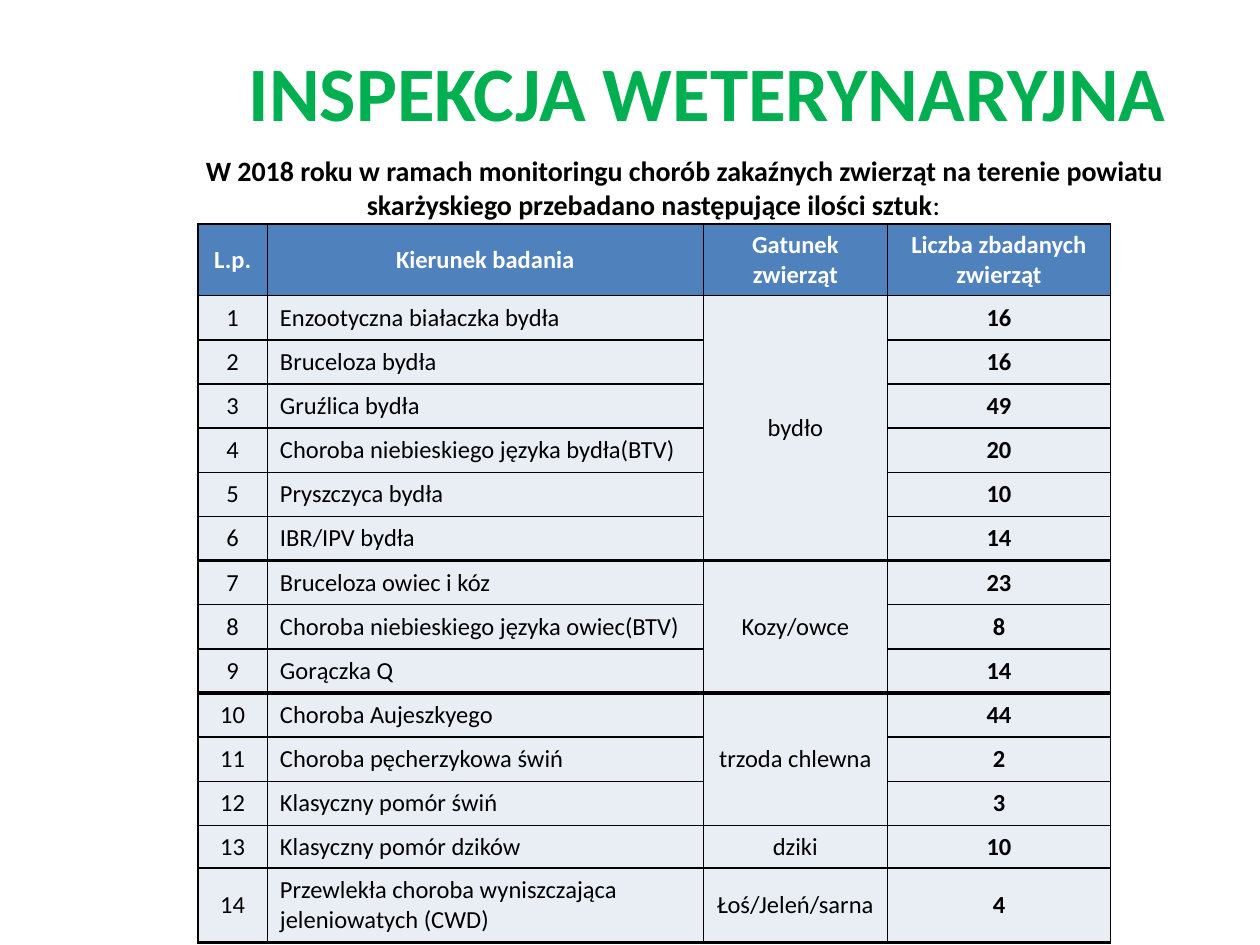
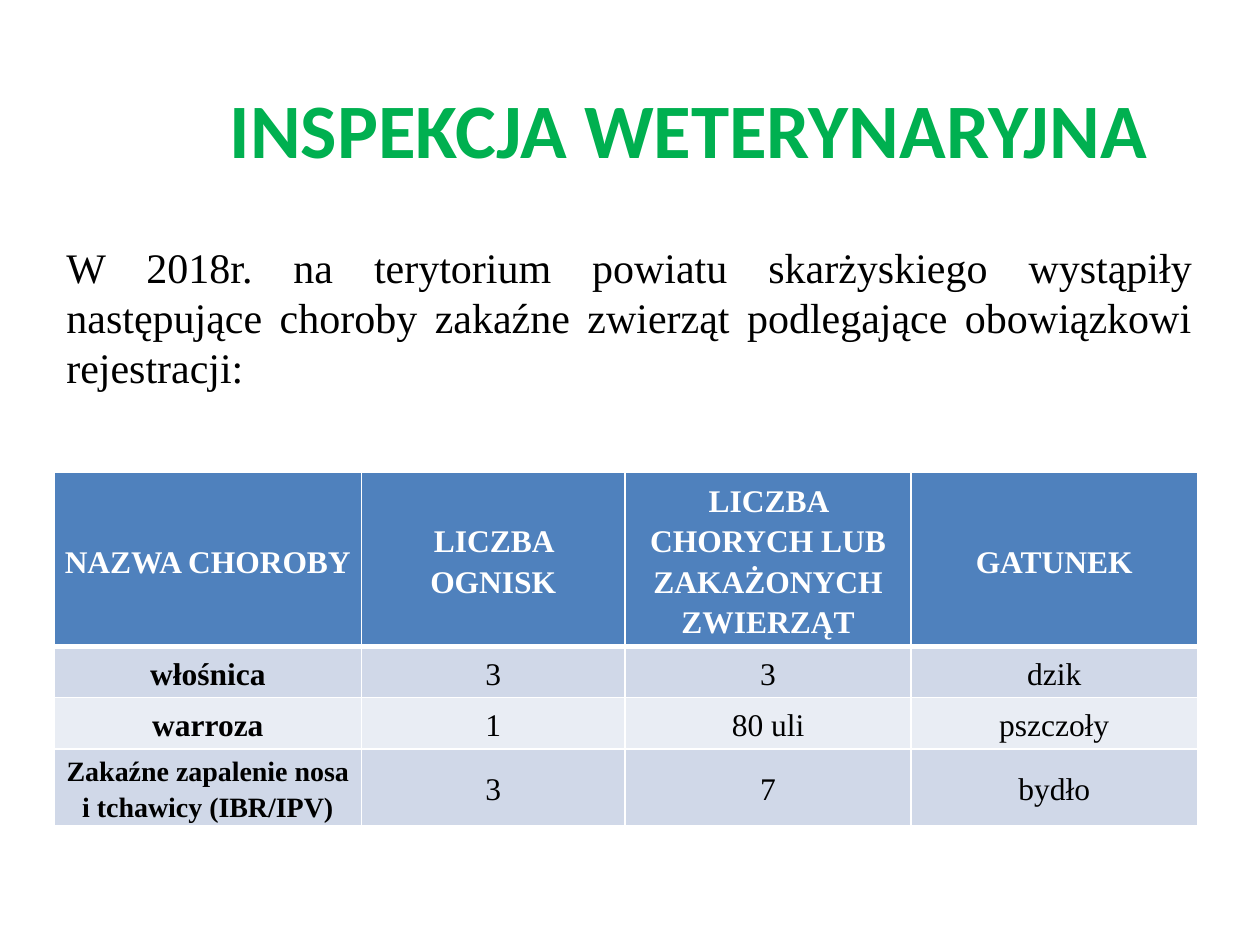
"""Build two slides on the 2018 veterinary inspection results."""
from lxml.etree import SubElement
from pptx import Presentation
from pptx.dml.color import RGBColor
from pptx.enum.text import MSO_ANCHOR as Anchor, PP_ALIGN as Align
from pptx.oxml.ns import qn
from pptx.util import Cm, Pt

COLOURS = {
    "title": "00B050",
    "text": "000000",
    "header": "4F81BD",
    "light": "E9EDF4",
    "dark": "D0D8E8",
    "white": "FFFFFF",
}


def write(paragraph, text, size=14, font="Calibri", colour="text", bold=False, align=Align.CENTER):
    paragraph.alignment = align
    run = paragraph.add_run()
    run.text = text
    run.font.size = Pt(size)
    run.font.name = font
    run.font.bold = bold
    run.font.color.rgb = RGBColor.from_string(COLOURS[colour])


def dress(cell, fill, line, top=1, bottom=1):
    cell.vertical_anchor = Anchor.MIDDLE
    properties = cell._tc.get_or_add_tcPr()
    for side, width in (("L", 1), ("R", 1), ("T", top), ("B", bottom)):
        border = SubElement(properties, qn(f"a:ln{side}"), w=str(Pt(width)))
        paint = SubElement(border, qn("a:solidFill"))
        SubElement(paint, qn("a:srgbClr"), val=COLOURS[line])
    cell.fill.solid()
    cell.fill.fore_color.rgb = RGBColor.from_string(COLOURS[fill])


deck = Presentation()
deck.slide_width, deck.slide_height = Cm(25.4), Cm(19.05)
blank = deck.slide_layouts[6]
monitoring = deck.slides.add_slide(blank)
outbreaks = deck.slides.add_slide(blank)

for slide, left, top in ((monitoring, 4.67, 0.78), (outbreaks, 4.29, 1.52)):
    title = slide.shapes.add_textbox(Cm(left), Cm(top), Cm(19.2), Cm(2.13)).text_frame
    title.word_wrap = True
    write(title.paragraphs[0], "INSPEKCJA WETERYNARYJNA", size=44, colour="title", bold=True)

intro = monitoring.shapes.add_textbox(Cm(1.27), Cm(2.97), Cm(22.86), Cm(1.6)).text_frame
intro.word_wrap = True
lead = intro.paragraphs[0]
indents = lead._p.get_or_add_pPr()
indents.set("marL", str(Cm(0.95)))
indents.set("indent", str(Cm(1.25)))
write(lead, "W 2018 roku w ramach monitoringu chorób zakaźnych zwierząt na terenie powiatu "
      "skarżyskiego przebadano następujące ilości sztuk", size=16, bold=True)
write(lead, ":", size=16)

tests = [
    ("Enzootyczna białaczka bydła", 16),
    ("Bruceloza bydła", 16),
    ("Gruźlica bydła", 49),
    ("Choroba niebieskiego języka bydła(BTV)", 20),
    ("Pryszczyca bydła", 10),
    ("IBR/IPV bydła", 14),
    ("Bruceloza owiec i kóz", 23),
    ("Choroba niebieskiego języka owiec(BTV)", 8),
    ("Gorączka Q", 14),
    ("Choroba Aujeszkyego", 44),
    ("Choroba pęcherzykowa świń", 2),
    ("Klasyczny pomór świń", 3),
    ("Klasyczny pomór dzików", 10),
    ("Przewlekła choroba wyniszczająca jeleniowatych (CWD)", 4),
]
species = [("bydło", 1, 6), ("Kozy/owce", 7, 9), ("trzoda chlewna", 10, 12),
           ("dziki", 13, 13), ("Łoś/Jeleń/sarna", 14, 14)]
thick_after = {6: 2.25, 9: 2.25, 14: 2.25}

tested = monitoring.shapes.add_table(15, 4, Cm(3.99), Cm(4.52), Cm(18.4), Cm(14.44)).table
for column, width in zip(tested.columns, (1.4, 8.79, 3.71, 4.5)):
    column.width = Cm(width)
for row, height in zip(tested.rows, [1.4] + [0.89] * 12 + [0.86, 1.5]):
    row.height = Cm(height)

for index, heading in enumerate(("L.p.", "Kierunek badania", "Gatunek zwierząt",
                                 "Liczba zbadanych zwierząt")):
    cell = tested.cell(0, index)
    dress(cell, "header", "text")
    write(cell.text_frame.paragraphs[0], heading, colour="white", bold=True)

for number, (test, count) in enumerate(tests, start=1):
    for index, text, bold, align in ((0, str(number), False, Align.CENTER),
                                     (1, test, False, Align.LEFT),
                                     (3, str(count), True, Align.CENTER)):
        cell = tested.cell(number, index)
        dress(cell, "light", "text", thick_after.get(number - 1, 1), thick_after.get(number, 1))
        write(cell.text_frame.paragraphs[0], text, bold=bold, align=align)

for animal, first, last in species:
    cell = tested.cell(first, 2)
    if last > first:
        cell.merge(tested.cell(last, 2))
    dress(cell, "light", "text", thick_after.get(first - 1, 1), thick_after.get(last, 1))
    write(cell.text_frame.paragraphs[0], animal)

cases = [
    ("NAZWA CHOROBY", "LICZBA OGNISK", "LICZBA CHORYCH LUB ZAKAŻONYCH ZWIERZĄT", "GATUNEK"),
    ("włośnica", "3", "3", "dzik"),
    ("warroza", "1", "80 uli", "pszczoły"),
    ("Zakaźne zapalenie nosa i tchawicy (IBR/IPV)", "3", "7", "bydło"),
]
fills = ("header", "dark", "light", "dark")

registered = outbreaks.shapes.add_table(4, 4, Cm(1.09), Cm(9.53), Cm(23.05), Cm(6.71)).table
for column, width in zip(registered.columns, (6.2, 5.31, 5.77, 5.77)):
    column.width = Cm(width)
for row, height in zip(registered.rows, (3.22, 1.03, 1.03, 1.43)):
    row.height = Cm(height)

for number, case in enumerate(cases):
    for index, text in enumerate(case):
        cell = registered.cell(number, index)
        dress(cell, fills[number], "white", top=3 if number == 1 else 1,
              bottom=3 if number == 0 else 1)
        cell.margin_left = cell.margin_right = Cm(0.13)
        cell.margin_top = cell.margin_bottom = 0
        entry = cell.text_frame.paragraphs[0]
        entry.line_spacing = 1.15
        write(entry, text, size=16 if (number, index) == (3, 0) else 18, font="Times New Roman",
              colour="white" if number == 0 else "text", bold=number == 0 or index == 0)

summary = outbreaks.shapes.add_textbox(Cm(1.09), Cm(4.72), Cm(23.19), Cm(3.33)).text_frame
summary.word_wrap = True
summary.vertical_anchor = Anchor.MIDDLE
write(summary.paragraphs[0], "W 2018r. na terytorium powiatu skarżyskiego wystąpiły następujące "
      "choroby zakaźne zwierząt podlegające obowiązkowi rejestracji:",
      size=24, font="Times New Roman", align=Align.JUSTIFY)

deck.save("out.pptx")
